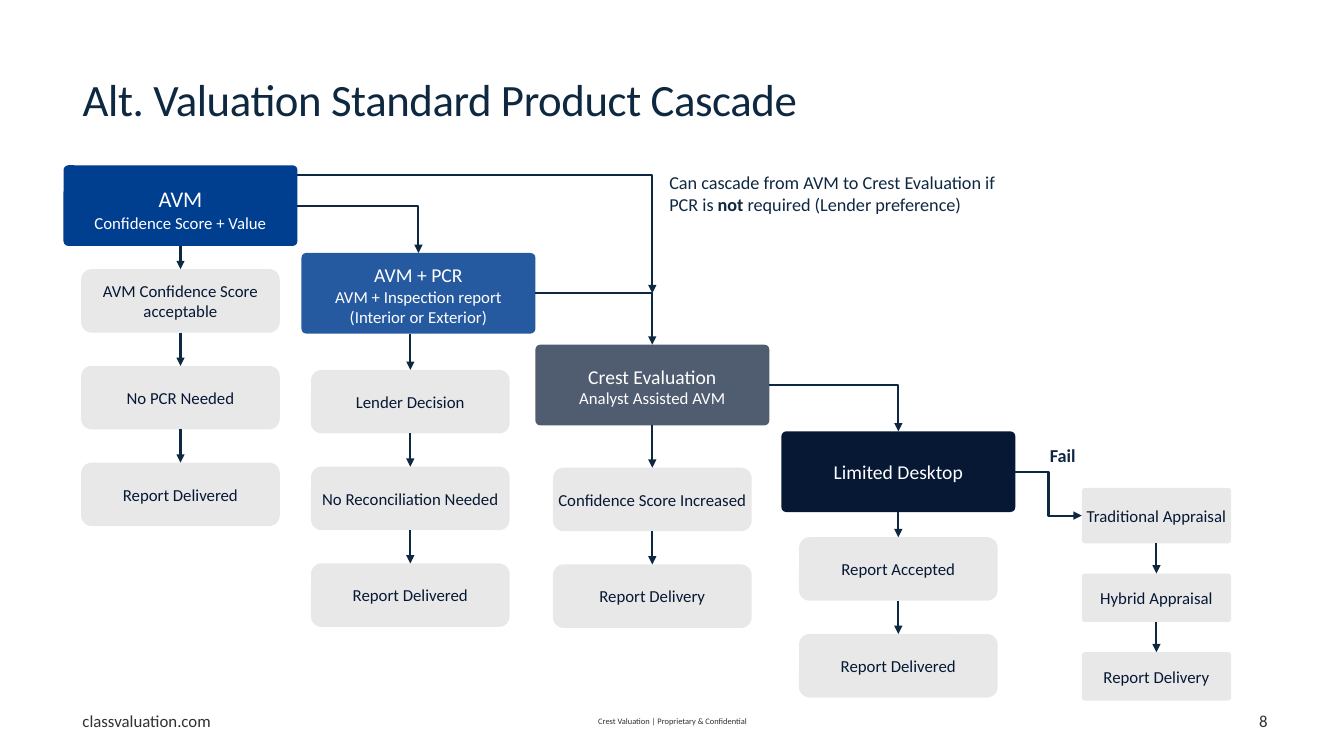
"""Build the product cascade slide."""
from lxml.etree import SubElement
from pptx import Presentation
from pptx.dml.color import RGBColor
from pptx.enum.shapes import MSO_CONNECTOR, MSO_SHAPE
from pptx.enum.text import MSO_ANCHOR, MSO_AUTO_SIZE, PP_ALIGN
from pptx.oxml.ns import qn
from pptx.util import Inches, Pt

NAVY = RGBColor(0x0E, 0x28, 0x41)
INK = RGBColor(0x06, 0x18, 0x34)
BLUE = RGBColor(0x00, 0x3E, 0x90)
PALE = RGBColor(0xE8, 0xE8, 0xE8)
GRAY = RGBColor(0x31, 0x31, 0x31)
WHITE = RGBColor(0xFF, 0xFF, 0xFF)
LEFT, MID, RIGHT = PP_ALIGN.LEFT, PP_ALIGN.CENTER, PP_ALIGN.RIGHT


def write(shape, text, sizes, color, align, anchor=MSO_ANCHOR.MIDDLE, pad=None):
    frame = shape.text_frame
    frame.text = text
    frame.word_wrap = True
    frame.auto_size = MSO_AUTO_SIZE.NONE
    frame.vertical_anchor = anchor
    if pad:
        (frame.margin_left, frame.margin_top,
         frame.margin_right, frame.margin_bottom) = [Inches(p) for p in pad]
    for para, size in zip(frame.paragraphs, sizes):
        para.alignment = align
        for run in para.runs:
            run.font.size = Pt(size)
            run.font.name = "Calibri"
            run.font.color.rgb = color
    return frame


def link(geom, x1, y1, x2, y2):
    kind = MSO_CONNECTOR.STRAIGHT if geom == "line" else MSO_CONNECTOR.ELBOW
    line = shapes.add_connector(kind, Inches(x1), Inches(y1), Inches(x2), Inches(y2))
    line.line.color.rgb = NAVY
    line.line.width = Pt(1.5)
    props = line._element.spPr
    props.find(qn("a:prstGeom")).set("prst", geom)
    SubElement(props.find(qn("a:ln")), qn("a:tailEnd"), type="triangle")
    SubElement(props, qn("a:effectLst"))
    return line


deck = Presentation()
deck.slide_width, deck.slide_height = Inches(13.33), Inches(7.5)
slide = deck.slides.add_slide(deck.slide_layouts[5])
shapes = slide.shapes

title = shapes.title
title.left, title.top = Inches(0.72), Inches(0.69)
title.width, title.height = Inches(11.1), Inches(0.96)
frame = write(title, "Alt. Valuation Standard Product Cascade", [32], NAVY, LEFT,
              MSO_ANCHOR.BOTTOM, (0.1, 0, 0.1, 0.4))
frame.paragraphs[0].line_spacing = 0.9
frame.paragraphs[0].runs[0].font._element.set("spc", "-30")

for x, y, w, h, text, size, align in [
    (0.72, 7, 1.96, 0.3, "classvaluation.com", 12, LEFT),
    (4.42, 6.95, 4.5, 0.4, "Crest Valuation | Proprietary & Confidential", 6, MID),
    (9.42, 6.95, 3.25, 0.4, "8", 12, RIGHT),
]:
    box = shapes.add_textbox(Inches(x), Inches(y), Inches(w), Inches(h))
    write(box, text, [size], GRAY, align)

link("bentConnector2", 1.8, 1.74, 6.47, 2.91)

HEAD_W, HEAD_H = 2.32, 0.8
heads = []
for mid, top, fill, alpha, drop, text, sizes in [
    (1.79, 1.64, BLUE, 100, 0.07, "AVM\nConfidence Score + Value", [16, 12]),
    (4.15, 2.51, BLUE, 85, 0.03,
     "AVM + PCR\nAVM + Inspection report\v(Interior or Exterior)", [14, 12]),
    (6.47, 3.42, INK, 70, 0.03, "Crest Evaluation\nAnalyst Assisted AVM", [14, 12]),
    (8.91, 4.28, INK, 100, 0, "Limited Desktop", [14]),
]:
    head = shapes.add_shape(MSO_SHAPE.ROUNDED_RECTANGLE, Inches(mid - HEAD_W / 2),
                            Inches(top), Inches(HEAD_W), Inches(HEAD_H))
    head.adjustments[0] = 0.06
    head.shadow.inherit = False
    head.fill.solid()
    head.fill.fore_color.rgb = fill
    head.line.fill.background()
    if alpha < 100:
        tint = head._element.spPr.find(qn("a:solidFill"))[0]
        SubElement(tint, qn("a:alpha"), val=str(alpha * 1000))
    write(head, text, sizes, WHITE, MID, pad=(0.03, drop, 0.03, 0))
    if heads:
        last, x, y = heads[-1]
        bend = link("bentConnector2", x + HEAD_W / 2, y + HEAD_H / 2, mid, top)
        bend.begin_connect(last, 3)
        bend.end_connect(head, 0)
    heads.append((head, mid, top))

STEP, CARD = MSO_SHAPE.FLOWCHART_ALTERNATE_PROCESS, MSO_SHAPE.ROUNDED_RECTANGLE
firsts = []
for kind, mid, top, width, highs, gap, texts in [
    (STEP, 1.79, 2.67, 1.97, [0.63] * 3, 0.33,
     ["AVM Confidence Score acceptable", "No PCR Needed", "Report Delivered"]),
    (STEP, 4.07, 3.67, 1.97, [0.63] * 3, 0.33,
     ["Lender Decision", "No Reconciliation Needed", "Report Delivered"]),
    (STEP, 6.47, 4.64, 1.97, [0.63] * 2, 0.33,
     ["Confidence Score Increased", "Report Delivery"]),
    (STEP, 8.91, 5.33, 1.97, [0.63] * 2, 0.33,
     ["Report Accepted", "Report Delivered"]),
    (CARD, 11.47, 4.84, 1.48, [0.55, 0.48, 0.48], 0.3,
     ["Traditional Appraisal", "Hybrid Appraisal", "Report Delivery"]),
]:
    last = None
    for high, text in zip(highs, texts):
        step = shapes.add_shape(kind, Inches(mid - width / 2), Inches(top),
                                Inches(width), Inches(high))
        if kind == CARD:
            step.adjustments[0] = 0.06
        step.shadow.inherit = False
        step.fill.solid()
        step.fill.fore_color.rgb = PALE
        step.line.fill.background()
        write(step, text, [12], INK, MID, pad=(0, 0, 0, 0))
        if last:
            arrow = link("line", mid, top - gap, mid, top)
            arrow.begin_connect(last, 2)
            arrow.end_connect(step, 0)
        else:
            firsts.append((step, mid, top))
        last = step
        top += high + gap

for (head, x, y), (step, mid, top) in zip(heads, firsts):
    arrow = link("line", mid, y + HEAD_H, mid, top)
    if x == mid:
        arrow.begin_connect(head, 2)
    arrow.end_connect(step, 0)

fail = link("bentConnector3", 10.07, 4.68, 10.73, 5.11)
fail.begin_connect(heads[-1][0], 3)
fail.end_connect(firsts[-1][0], 1)

label = shapes.add_textbox(Inches(9.73), Inches(4.36), Inches(1.62), Inches(0.32))
frame = write(label, "Fail", [13], NAVY, MID, MSO_ANCHOR.TOP)
frame.paragraphs[0].runs[0].font.bold = True

note = shapes.add_textbox(Inches(6.54), Inches(1.65), Inches(3.45), Inches(0.76))
para = note.text_frame.paragraphs[0]
note.text_frame.word_wrap = True
for text in ["Can cascade from AVM to Crest Evaluation if PCR is", " not ",
             "required (Lender preference)"]:
    run = para.add_run()
    run.text = text
    run.font.size = Pt(13)
    run.font.name = "Calibri"
    run.font.color.rgb = NAVY
    run.font.bold = text == " not "

deck.save("out.pptx")
